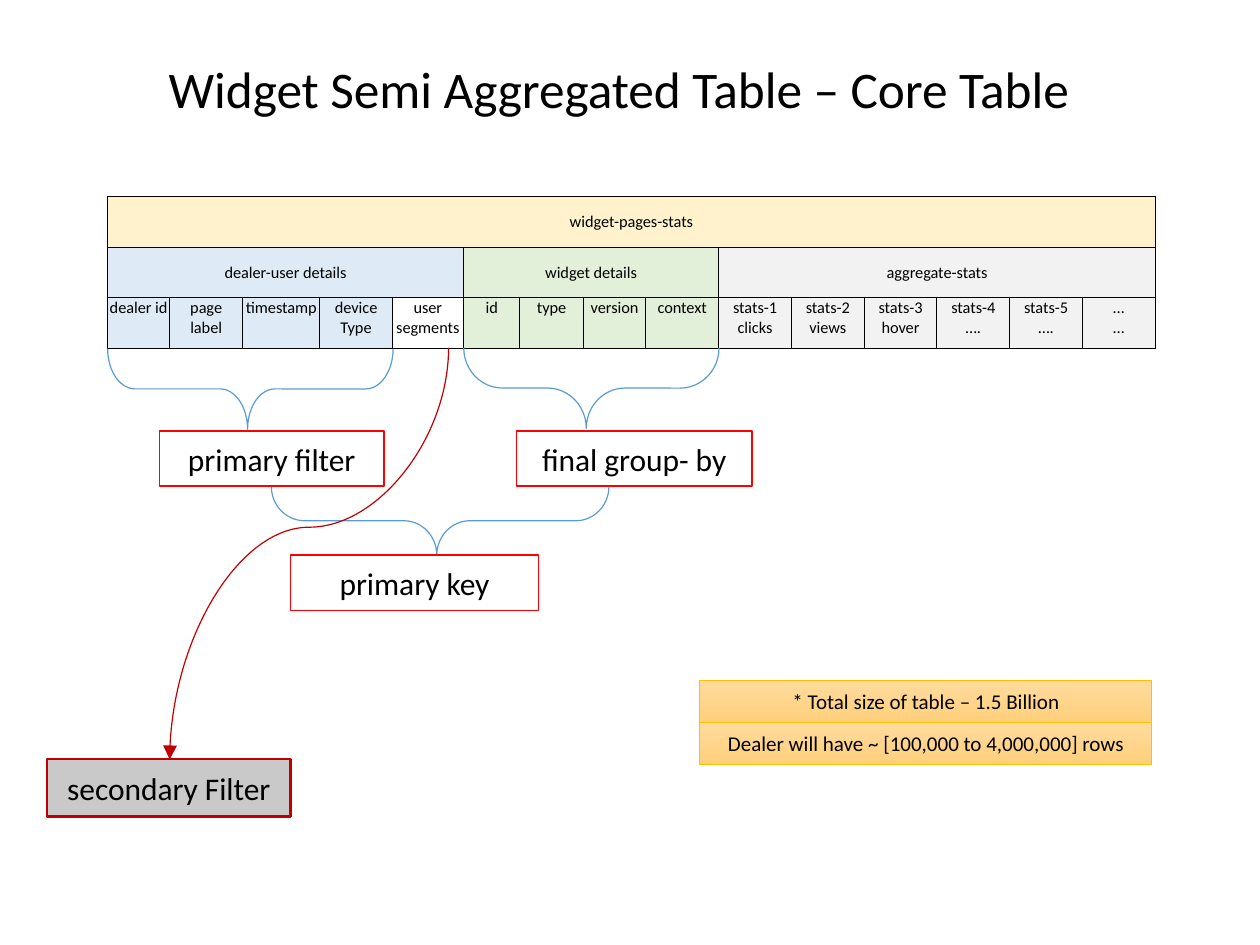
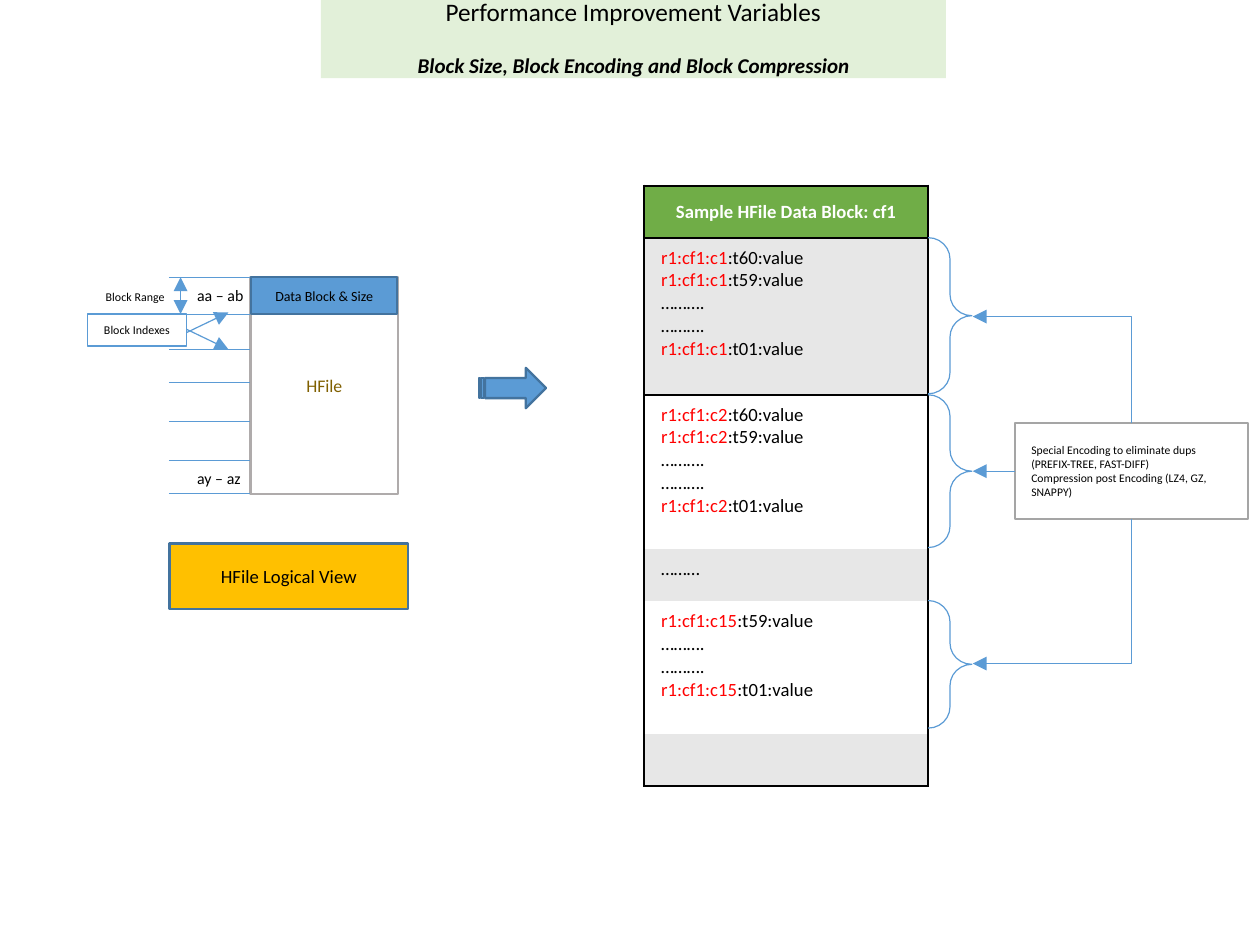
import pptx
import pptx.util
import pptx.dml.color
import pptx.enum.shapes
import pptx.enum.text
import pptx.oxml.ns
import lxml.etree

RGBColor = pptx.dml.color.RGBColor
Pt = pptx.util.Pt
SHAPE = pptx.enum.shapes.MSO_SHAPE
LINK = pptx.enum.shapes.MSO_CONNECTOR
ALIGN = pptx.enum.text.PP_ALIGN
MIDDLE = pptx.enum.text.MSO_ANCHOR.MIDDLE
qn = pptx.oxml.ns.qn

FONT = "Calibri"
BLACK = RGBColor(0x00, 0x00, 0x00)
WHITE = RGBColor(0xFF, 0xFF, 0xFF)
RED = RGBColor(0xFF, 0x00, 0x00)
DARK_RED = RGBColor(0xC0, 0x00, 0x00)
BLUE = RGBColor(0x5B, 0x9B, 0xD5)
DARK_BLUE = RGBColor(0x43, 0x73, 0x9E)
PALE_BLUE = RGBColor(0xDE, 0xEB, 0xF7)
GREEN = RGBColor(0x70, 0xAD, 0x47)
PALE_GREEN = RGBColor(0xE2, 0xF0, 0xD9)
GOLD = RGBColor(0xFF, 0xC0, 0x00)
CREAM = RGBColor(0xFF, 0xF2, 0xCC)
OLIVE = RGBColor(0x80, 0x60, 0x00)
GRADIENT = (RGBColor(0xFF, 0xDB, 0x9E), RGBColor(0xFF, 0xD0, 0x7C))
PALE_GRAY = RGBColor(0xF2, 0xF2, 0xF2)
BAND_GRAY = RGBColor(0xE7, 0xE7, 0xE7)
SILVER = RGBColor(0xC9, 0xC9, 0xC9)
WARM_GRAY = RGBColor(0xAF, 0xAB, 0xAB)
MID_GRAY = RGBColor(0xA5, 0xA5, 0xA5)
NO_STYLE = "{2D5ABB26-0587-4C30-8999-92F81FD0307C}"

prs = pptx.Presentation()
prs.slide_width = pptx.util.Inches(7.5)
prs.slide_height = prs.slide_width * 3 // 4
U = prs.slide_width / 75  # square grid, 75 columns wide
blank = prs.slide_layouts[6]


def add_box(s, at, lines=(), size=9, fill=None, line=None, width=0.5,
            color=BLACK, align=ALIGN.CENTER, kind=SHAPE.RECTANGLE):
    """Shape on the grid with middle-anchored text, one paragraph a line."""
    sp = s.shapes.add_shape(kind, *(int(v * U) for v in at))
    sp.shadow.inherit = False
    if fill is None:
        sp.fill.background()
    else:
        sp.fill.solid()
        sp.fill.fore_color.rgb = fill
    if line is None:
        sp.line.fill.background()
    else:
        sp.line.color.rgb = line
        sp.line.width = Pt(width)
    tf = sp.text_frame
    tf.word_wrap = True
    tf.vertical_anchor = MIDDLE
    tf.margin_top = tf.margin_bottom = 0
    if align == ALIGN.RIGHT:
        tf.margin_left = 0
    for i, text in enumerate(lines):
        p = tf.add_paragraph() if i else tf.paragraphs[0]
        p.text = text
        p.alignment = align
        p.font.name, p.font.size, p.font.color.rgb = FONT, Pt(size), color
    return sp


def add_line(s, x1, y1, x2, y2, color=BLUE, ends=(), kind=LINK.STRAIGHT, turn=0):
    """Connector between two grid points; turn is its quarter turns clockwise."""
    cx, cy, dx, dy = (x1 + x2) / 2, (y1 + y2) / 2, (x1 - x2) / 2, (y1 - y2) / 2
    if turn:
        dx, dy = turn * dy, -turn * dx
    c = s.shapes.add_connector(
        kind, *(int(v * U) for v in (cx + dx, cy + dy, cx - dx, cy - dy)))
    c.line.color.rgb = color
    c.line.width = Pt(0.5)
    for end in ends:
        lxml.etree.SubElement(c.line._ln, qn("a:" + end)).set("type", "triangle")
    sp_pr = c._element.spPr
    lxml.etree.SubElement(sp_pr, qn("a:effectLst"))
    if turn:
        sp_pr.find(qn("a:xfrm")).set("rot", str(turn % 4 * 5400000))
    return c


borders = []  # (cell, sides, points)

# Slide 1: core table
s = prs.slides.add_slide(blank)
sp = add_box(s, (4.5, 1.7, 64.7, 7.5), ["Widget Semi Aggregated Table – Core Table"], 22)
sp.text_frame.paragraphs[0].line_spacing = 0.9

groups = [
    ("dealer-user details", PALE_BLUE,
     ["dealer id", "page\nlabel", "timestamp", "device\nType", "user\nsegments"]),
    ("widget details", PALE_GREEN, ["id", "type", "version", "context"]),
    ("aggregate-stats", PALE_GRAY,
     ["stats-1\nclicks", "stats-2\nviews", "stats-3\nhover",
      "stats-4\n….", "stats-5\n….", "…\n…"]),
]
widths = [3.7, 4.35, 4.6, 4.3, 4.25, 3.35, 3.8, 3.7, 4.35]
widths += [(62.4 - sum(widths)) / 6] * 6
core = s.shapes.add_table(3, 15, int(6.4 * U), int(11.7 * U),
                          int(62.4 * U), int(9.05 * U)).table
for column, w in zip(core.columns, widths):
    column.width = int(w * U)

entries = [(0, 0, 15, "widget-pages-stats", CREAM)]
col = 0
for name, fill, fields in groups:
    entries.append((1, col, len(fields), name, fill))
    for field in fields:
        entries.append((2, col, 1, field, WHITE if field == "user\nsegments" else fill))
        col += 1
for row, col, span, text, fill in entries:
    cell = core.cell(row, col)
    if span > 1:
        cell.merge(core.cell(row, col + span - 1))
    cell.text = text
    cell.fill.solid()
    cell.fill.fore_color.rgb = fill
    cell.margin_left = cell.margin_right = cell.margin_top = cell.margin_bottom = 0
    if row < 2:
        cell.vertical_anchor = MIDDLE
    for p in cell.text_frame.paragraphs:
        p.alignment = ALIGN.CENTER
        p.font.name, p.font.size, p.font.color.rgb = FONT, Pt(7), BLACK
borders += [(cell, "LRTB", 0.5) for cell in core.iter_cells()]

# Braces under the columns and the keys they lead to
for at, curve, point in [((32.8, 15.5, 4.8, 15.2), 0.48, 0.52),
                         ((12.5, 14.65, 4.8, 17), 0.34, 0.51),
                         ((24.15, 20.95, 4.1, 20.1), 0.48, 0.51)]:
    sp = add_box(s, at, line=BLUE, kind=SHAPE.RIGHT_BRACE)
    sp.rotation = 90
    sp.adjustments[0], sp.adjustments[1] = curve, point
for text, x, y, w in [("primary filter", 9.5, 25.65, 13.35),
                      ("final group- by", 30.75, 25.65, 14),
                      ("primary key", 17.3, 33.05, 14.75)]:
    add_box(s, (x, y, w, 3.3), [text], 13.5, line=RED, width=0.75)

# Size notes
for i, text in enumerate(["* Total size of table – 1.5 Billion",
                          "Dealer will have ~ [100,000 to 4,000,000] rows"]):
    sp = add_box(s, (41.65, 40.5 + 2.5 * i, 26.9, 2.5), [text], line=GOLD)
    sp.fill.gradient()
    sp.fill.gradient_angle = 270
    for stop, color in zip(sp.fill.gradient_stops, GRADIENT):
        stop.color.rgb = color

# Curve from the user segments to the secondary filter
c = add_line(s, 26.7, 20.7, 10.1, 45.2, DARK_RED, ["tailEnd"], LINK.CURVE, 1)
guides = c._element.spPr.find(qn("a:prstGeom")).get_or_add_avLst()
guide = lxml.etree.SubElement(guides, qn("a:gd"))
guide.set("name", "adj1")
guide.set("fmla", "val 43600")
add_box(s, (2.8, 45.2, 14.5, 3.4), ["secondary Filter"], 13.5, SILVER, DARK_RED, 1)

# Slide 2: performance variables
s = prs.slides.add_slide(blank)
sp = add_box(s, (19.1, 0, 37.2, 4.65),
             ["Performance Improvement Variables",
              "Block Size, Block Encoding and Block Compression"], 10.8, PALE_GREEN)
for p in sp.text_frame.paragraphs:
    p.line_spacing = 0.9
p.space_before = Pt(12)
p.font.size, p.font.bold, p.font.italic = Pt(9), True, True

# Sample data block
DOTS = "………."
blocks = [
    (3.1, GREEN, "LRTB", ["Sample HFile Data Block: cf1"]),
    (9.35, BAND_GRAY, "LRTB",
     ["r1:cf1:c1:t60:value", "r1:cf1:c1:t59:value", DOTS, DOTS, "r1:cf1:c1:t01:value"]),
    (9.2, WHITE, "LR",
     ["r1:cf1:c2:t60:value", "r1:cf1:c2:t59:value", DOTS, DOTS, "r1:cf1:c2:t01:value"]),
    (3.1, BAND_GRAY, "LR", ["………"]),
    (7.9, WHITE, "LR", ["r1:cf1:c15:t59:value", DOTS, DOTS, "r1:cf1:c15:t01:value"]),
    (3.1, BAND_GRAY, "LRB", [""]),
]
sample = s.shapes.add_table(len(blocks), 1, int(38.35 * U), int(11.05 * U), int(16.9 * U),
                            int(sum(b[0] for b in blocks) * U)).table
for i, (height, fill, sides, lines) in enumerate(blocks):
    sample.rows[i].height = int(height * U)
    cell = sample.cell(i, 0)
    cell.fill.solid()
    cell.fill.fore_color.rgb = fill
    borders.append((cell, sides, 1))
    for j, text in enumerate(lines):
        p = cell.text_frame.add_paragraph() if j else cell.text_frame.paragraphs[0]
        p.font.name, p.font.size = FONT, Pt(8)
        key, mark, rest = text.partition(":t")
        for part, color in [(key, RED if mark else BLACK), (mark + rest, BLACK)]:
            if part:
                r = p.add_run()
                r.text = part
                r.font.color.rgb = color
cell.margin_top = cell.margin_bottom = 0
head = sample.cell(0, 0)
head.vertical_anchor = MIDDLE
p = head.text_frame.paragraphs[0]
p.alignment = ALIGN.CENTER
p.font.bold = True
p.runs[0].font.color.rgb = WHITE

# HFile with its block boundaries
add_box(s, (14.9, 16.5, 8.8, 12.9), ["HFile"], 7.6, line=WARM_GRAY, width=1, color=OLIVE)
for y in (16.5, 18.7, 20.8, 22.75, 25.1, 27.4, 29.4):
    add_line(s, 10.05, y, 14.9, y)
for text, y in [("aa – ab", 16.5), ("ay – az", 27.4)]:
    add_box(s, (10.75, y, 5.4, 2.1), [text], 6.8, align=ALIGN.LEFT)
add_box(s, (14.95, 16.5, 8.7, 2.2), ["Data Block & Size"], 6, BLUE, DARK_BLUE, 1)
add_box(s, (5.2, 18.7, 5.9, 1.9), ["Block Indexes"], 5.1, line=BLUE, width=0.75,
        align=ALIGN.RIGHT)
add_box(s, (5.2, 16.7, 5.6, 1.9), ["Block Range"], 5.1, align=ALIGN.RIGHT)
add_line(s, 10.75, 16.5, 10.75, 18.7, ends=["headEnd", "tailEnd"])
for y1, y2 in [(19.8, 18.6), (19.6, 20.8)]:
    add_line(s, 11.1, y1, 13.6, y2, ends=["tailEnd"])
add_box(s, (10.1, 32.35, 14.2, 3.9), ["HFile Logical View"], 8, GOLD, DARK_BLUE, 1)
add_box(s, (28.5, 21.9, 4, 2.4), fill=BLUE, line=DARK_BLUE, width=1,
        kind=SHAPE.STRIPED_RIGHT_ARROW)

# Encoding note, linked to a brace beside each block
for y, height in [(14.15, 9.3), (23.5, 9.1), (35.75, 7.6)]:
    sp = add_box(s, (55.25, y, 2.6, height), line=BLUE, kind=SHAPE.RIGHT_BRACE)
    sp.adjustments[0] = 0.49
add_box(s, (60.4, 25.2, 13.9, 5.7),
        ["Special Encoding to eliminate dups (PREFIX-TREE, FAST-DIFF)",
         "Compression post Encoding (LZ4, GZ, SNAPPY)"],
        5, WHITE, MID_GRAY, 1, align=ALIGN.LEFT)
add_line(s, 60.4, 28.05, 57.9, 28.05, ends=["tailEnd"])
for y1, y2, turn in [(25.2, 18.85, -1), (30.9, 39.5, 1)]:
    c = add_line(s, 67.35, y1, 57.9, y2, BLUE, ["tailEnd"], LINK.ELBOW, turn)
    c._element.spPr.find(qn("a:prstGeom")).set("prst", "bentConnector2")

# Plain table style and cell borders
for table in (core, sample):
    table._tbl.tblPr.find(qn("a:tableStyleId")).text = NO_STYLE
for cell, sides, points in borders:
    tc_pr = cell._tc.get_or_add_tcPr()
    for i, side in enumerate(sides):
        ln = lxml.etree.Element(qn("a:ln" + side), w=str(Pt(points)))
        solid = lxml.etree.SubElement(ln, qn("a:solidFill"))
        lxml.etree.SubElement(solid, qn("a:srgbClr")).set("val", str(BLACK))
        tc_pr.insert(i, ln)

prs.save("out.pptx")
